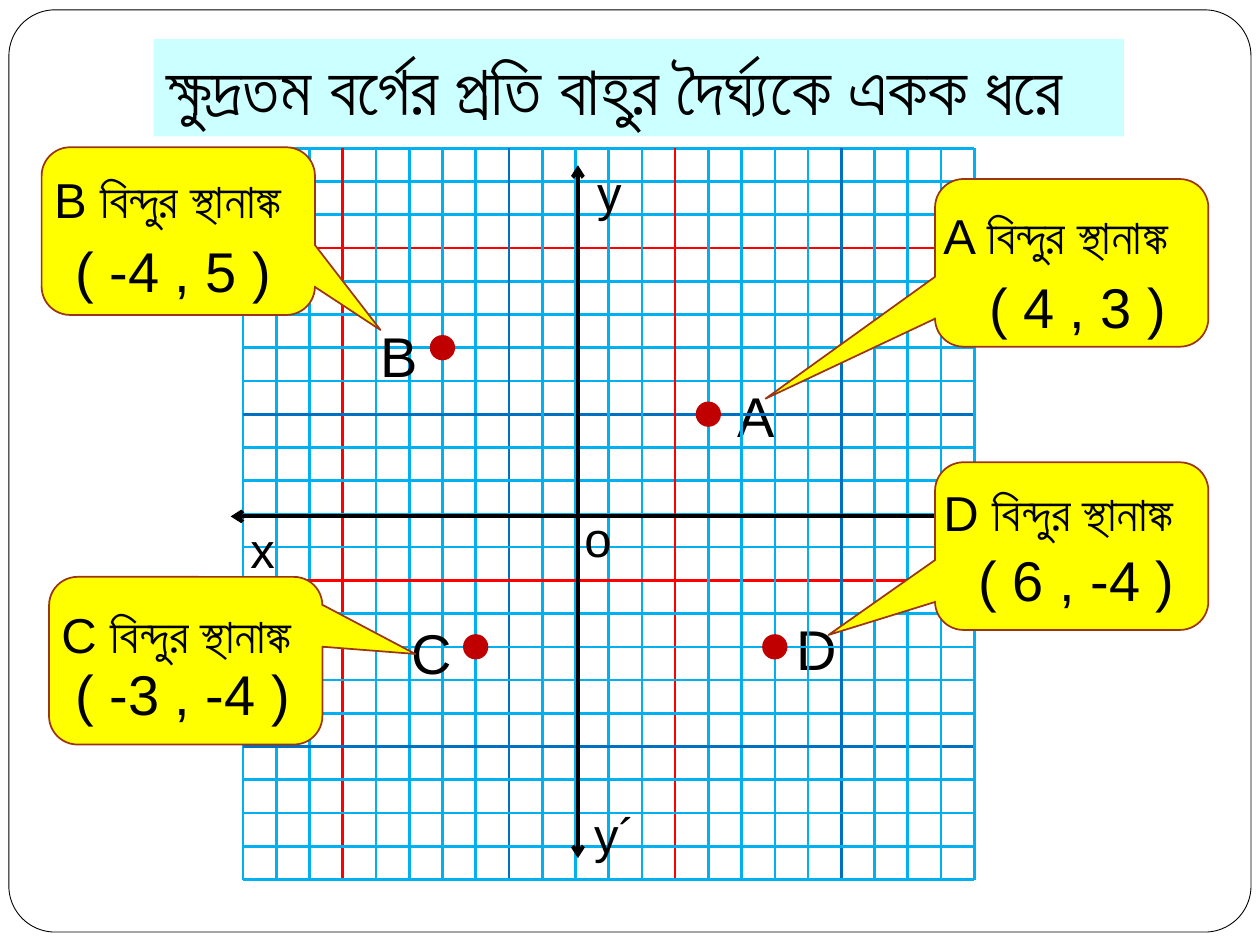
"""Coordinate grid with four points and a callout for the coordinates of each."""
from dataclasses import dataclass

from lxml import etree
from pptx import Presentation
from pptx import util as u
from pptx.dml.color import RGBColor
from pptx.enum import shapes, text
from pptx.oxml.ns import qn

COLOURS = {
    "white": "FFFFFF", "black": "000000", "minor": "00B0F0", "middle": "0070C0",
    "major": "FF0000", "point": "C00000", "title": "CCFFFF", "callout": "FFFF00",
    "callout_edge": "9C3511",
}
FONT = "Arial"
GRID_LEFT, GRID_TOP, GRID_SIDE, CELLS = 4.9, 2.99, 14.74, 22
UNIT = GRID_SIDE / CELLS
ORIGIN_X, ORIGIN_Y = GRID_LEFT + 10 * UNIT, GRID_TOP + 11 * UNIT
DOT = 0.51
CALLOUT_WIDTH, CALLOUT_HEIGHT = 5.51, 3.38


@dataclass(frozen=True)
class Box:
    left: float
    top: float
    width: float
    height: float

    def lengths(self) -> list[u.Length]:
        return [u.Cm(n) for n in (self.left, self.top, self.width, self.height)]


@dataclass(frozen=True)
class Point:
    name: str
    x: int
    y: int
    letter: Box
    callout: tuple[float, float]
    tip: tuple[float, float]
    caption: Box
    coordinates: Box


@dataclass(frozen=True)
class AxisLabel:
    wording: str
    box: Box


POINTS = [
    Point("A", 4, 3, Box(14.61, 7.57, 1.27, 1.63), (18.85, 3.61), (-1.12, 0.81),
          Box(18.77, 4.01, 5.61, 1.45), Box(19.69, 5.36, 4.11, 1.63)),
    Point("D", 6, -4, Box(15.8, 12.27, 1.35, 1.63), (18.85, 9.32), (-0.89, 0.53),
          Box(18.77, 9.6, 5.74, 1.45), Box(19.48, 10.87, 4.5, 1.63)),
    Point("B", -4, 5, Box(7.42, 6.35, 1.27, 1.63), (0.84, 2.97), (0.74, 0.59),
          Box(0.84, 3.3, 5.66, 1.45), Box(1.27, 4.65, 4.5, 1.63)),
    Point("C", -3, -4, Box(8.05, 12.34, 1.35, 1.63), (0.99, 11.63), (0.84, -0.04),
          Box(0.99, 12.07, 5.74, 1.45), Box(1.27, 13.18, 4.88, 1.63)),
]
AXIS_LABELS = [
    AxisLabel("o", Box(11.53, 10.13, 0.89, 1.45)),
    AxisLabel("x", Box(18.62, 10.34, 0.86, 1.45)),
    AxisLabel("x´", Box(4.8, 10.34, 1.14, 1.45)),
    AxisLabel("y", Box(11.79, 3.15, 1.02, 1.45)),
    AxisLabel("y´", Box(11.73, 16.1, 1.35, 1.45)),
]


def rgb(colour: str) -> RGBColor:
    return RGBColor.from_string(COLOURS[colour])


def write(slide, wording: str, box: Box, *, size: float = 28,
          colour: str = "black", fill: str | None = None) -> None:
    label = slide.shapes.add_textbox(*box.lengths())
    if fill:
        label.fill.solid()
        label.fill.fore_color.rgb = rgb(fill)
    frame = label.text_frame
    frame.word_wrap = False
    frame.auto_size = text.MSO_AUTO_SIZE.SHAPE_TO_FIT_TEXT
    run = frame.paragraphs[0].add_run()
    run.text = wording
    run.font.name = FONT
    run.font.size = u.Pt(size)
    run.font.color.rgb = rgb(colour)


def draw_shape(slide, kind: shapes.MSO_SHAPE, box: Box, fill: str,
               edge: str | None = None, weight: float = 1,
               adjustments: tuple[float, ...] = ()) -> None:
    figure = slide.shapes.add_shape(kind, *box.lengths())
    figure.shadow.inherit = False
    figure.fill.solid()
    figure.fill.fore_color.rgb = rgb(fill)
    if edge:
        figure.line.color.rgb = rgb(edge)
        figure.line.width = u.Pt(weight)
    else:
        figure.line.fill.background()
    for index, value in enumerate(adjustments):
        figure.adjustments[index] = value


def draw_line(slide, start: tuple[float, float], end: tuple[float, float],
              colour: str, weight: float = 1.5, arrows: bool = False) -> None:
    ends = [u.Cm(n) for n in (*start, *end)]
    line = slide.shapes.add_connector(shapes.MSO_CONNECTOR.STRAIGHT, *ends)
    line.line.color.rgb = rgb(colour)
    line.line.width = u.Pt(weight)
    if arrows:
        for tag in ("a:headEnd", "a:tailEnd"):
            etree.SubElement(line.line._get_or_add_ln(), qn(tag), type="arrow")
    etree.SubElement(line._element.spPr, qn("a:effectLst"))


def draw_grid(slide) -> None:
    right, bottom = GRID_LEFT + GRID_SIDE, GRID_TOP + GRID_SIDE
    for index in range(CELLS + 1):
        colour = {3: "major", 8: "middle"}.get(index % 10, "minor")
        x, y = GRID_LEFT + index * UNIT, GRID_TOP + index * UNIT
        draw_line(slide, (x, GRID_TOP), (x, bottom), colour)
        draw_line(slide, (GRID_LEFT, y), (right, y), colour)


def draw_axes(slide) -> None:
    draw_line(slide, (4.65, 10.41), (19.89, 10.41), "black", 2.25, arrows=True)
    draw_line(slide, (11.65, 3.33), (11.65, 17.3), "black", 2.25, arrows=True)
    for label in AXIS_LABELS:
        write(slide, label.wording, label.box)


def draw_dot(slide, point: Point) -> None:
    left = ORIGIN_X + point.x * UNIT - DOT / 2
    top = ORIGIN_Y - point.y * UNIT - DOT / 2
    draw_shape(slide, shapes.MSO_SHAPE.OVAL, Box(left, top, DOT, DOT), "point")


def draw_callout(slide, point: Point) -> None:
    draw_shape(slide, shapes.MSO_SHAPE.ROUNDED_RECTANGULAR_CALLOUT,
               Box(*point.callout, CALLOUT_WIDTH, CALLOUT_HEIGHT), "callout",
               "callout_edge", adjustments=(*point.tip, 0.17))
    write(slide, f"{point.name} বিন্দুর স্থানাঙ্ক", point.caption)
    write(slide, f"( {point.x} , {point.y} )", point.coordinates, size=32)


def main() -> None:
    deck = Presentation()
    deck.slide_width, deck.slide_height = u.Cm(25.4), u.Cm(19.05)
    slide = deck.slides.add_slide(deck.slide_layouts[6])
    draw_shape(slide, shapes.MSO_SHAPE.ROUNDED_RECTANGLE,
               Box(0.18, 0.2, 25.04, 18.59), "white", "black", 0.5, (0.05,))
    for point in POINTS[:2]:
        write(slide, point.name, point.letter, size=32)
    draw_grid(slide)
    draw_axes(slide)
    for point in POINTS:
        draw_dot(slide, point)
    for point in POINTS[2:]:
        write(slide, point.name, point.letter, size=32)
    write(slide, "ক্ষুদ্রতম বর্গের প্রতি বাহুর দৈর্ঘ্যকে একক ধরে",
          Box(3.1, 0.79, 19.56, 1.96), size=40, fill="title")
    for point in POINTS:
        draw_callout(slide, point)
    deck.save("out.pptx")


if __name__ == "__main__":
    main()
